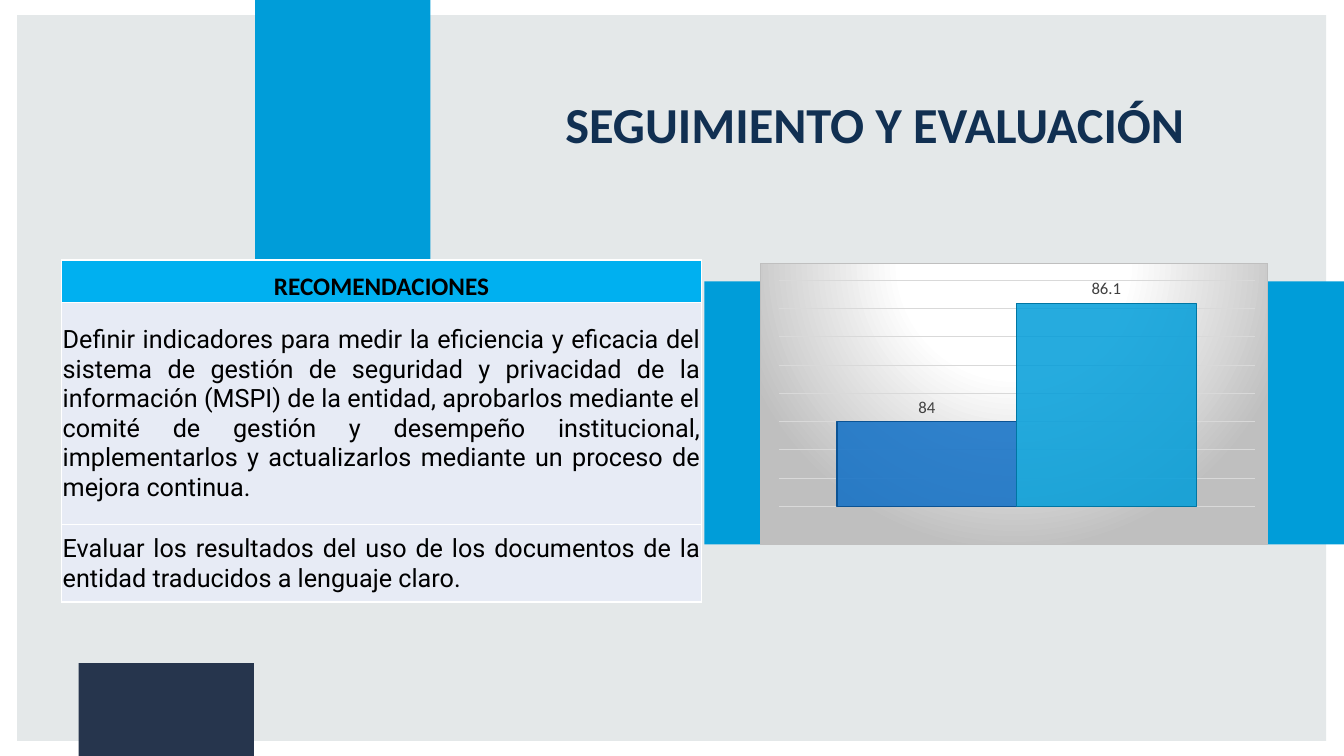
from dataclasses import dataclass

from lxml import etree
from pptx import Presentation
from pptx.chart.data import CategoryChartData
from pptx.dml.color import RGBColor
from pptx.enum.chart import XL_CHART_TYPE, XL_LABEL_POSITION
from pptx.enum.shapes import MSO_SHAPE
from pptx.enum.text import MSO_ANCHOR, PP_ALIGN
from pptx.oxml import parse_xml
from pptx.oxml.ns import nsdecls, qn
from pptx.util import Cm, Pt

CENTER, JUSTIFY = PP_ALIGN.CENTER, PP_ALIGN.JUSTIFY
BOTTOM, MIDDLE = MSO_ANCHOR.BOTTOM, MSO_ANCHOR.MIDDLE
RECTANGLE = MSO_SHAPE.RECTANGLE
CLUSTERED = XL_CHART_TYPE.COLUMN_CLUSTERED
OUTSIDE_END = XL_LABEL_POSITION.OUTSIDE_END


@dataclass(frozen=True)
class Theme:
    panel: str = "E4E8E9"
    band: str = "009DD9"
    foot: str = "26354D"
    title: str = "113052"
    text: str = "000000"
    header: str = "00B0F0"
    row: str = "E7EBF5"
    border: str = "FFFFFF"
    grid: str = "D9D9D9"
    frame: str = "BFBFBF"
    label: str = "404040"
    heading_font: str = "Calibri"
    body_font: str = "Roboto"
    title_size: int = 36
    body_size: int = 18
    label_size: int = 12
    axis_size: int = 10


THEME = Theme()

RECOMMENDATIONS = (
    "Definir indicadores para medir la eficiencia y eficacia del sistema de gestión "
    "de seguridad y privacidad de la información (MSPI) de la entidad, aprobarlos "
    "mediante el comité de gestión y desempeño institucional, implementarlos y "
    "actualizarlos mediante un proceso de mejora continua.",
    "Evaluar los resultados del uso de los documentos de la entidad traducidos a "
    "lenguaje claro.",
)

# name, value, fill, outline, number format
SCORES = (
    ("Series 1", 84, "0F6FC6", "0B5394", "General"),
    ("Series 2", 86.1, "009DD9", "0076A3", "0.0"),
)


def rgb(code):
    return RGBColor.from_string(code)


def style_font(font, size, color, name=THEME.heading_font, bold=False):
    font.size, font.name, font.bold = Pt(size), name, bold
    font.color.rgb = rgb(color)


def write(frame, text, align, anchor, spacing=None, **font_format):
    frame.word_wrap = True
    frame.vertical_anchor = anchor
    paragraph = frame.paragraphs[0]
    paragraph.alignment = align
    paragraph.line_spacing = spacing
    run = paragraph.add_run()
    run.text = text
    style_font(run.font, **font_format)


def add_block(slide, left, top, width, height, color):
    block = slide.shapes.add_shape(RECTANGLE, Cm(left), Cm(top), Cm(width), Cm(height))
    block.shadow.inherit = False
    block.fill.solid()
    block.fill.fore_color.rgb = rgb(color)
    block.line.fill.background()


def add_title(slide, text):
    title = slide.shapes.title
    title.left, title.top, title.width, title.height = Cm(10.9), Cm(0.53), Cm(22.3), Cm(3.48)
    write(title.text_frame, text, CENTER, BOTTOM, spacing=0.9,
          size=THEME.title_size, color=THEME.title, bold=True)
    # Bring the title in front of the background blocks
    slide.shapes.element.append(title.element)


def set_borders(cell):
    properties = cell._tc.get_or_add_tcPr()
    for position, side in enumerate(("lnL", "lnR", "lnT", "lnB")):
        properties.insert(position, parse_xml(
            f'<a:{side} {nsdecls("a")} w="12700"><a:solidFill>'
            f'<a:srgbClr val="{THEME.border}"/></a:solidFill></a:{side}>'))


def fill_cell(cell, text, color, align, anchor, **font_format):
    cell.margin_left = cell.margin_right = cell.margin_top = Cm(0.03)
    cell.margin_bottom = 0
    cell.fill.solid()
    cell.fill.fore_color.rgb = rgb(color)
    set_borders(cell)
    write(cell.text_frame, text, align, anchor,
          size=THEME.body_size, color=THEME.text, **font_format)
    cell.vertical_anchor = anchor


def add_recommendations(slide):
    heights = (1.07, 5.59, 1.96)
    table = slide.shapes.add_table(len(heights), 1, Cm(1.55), Cm(6.55),
                                   Cm(16.13), Cm(sum(heights))).table
    for row, height in zip(table.rows, heights):
        row.height = Cm(height)
    fill_cell(table.cell(0, 0), "RECOMENDACIONES", THEME.header, CENTER, BOTTOM, bold=True)
    for index, text in enumerate(RECOMMENDATIONS, 1):
        fill_cell(table.cell(index, 0), text, THEME.row, JUSTIFY, MIDDLE,
                  name=THEME.body_font)


def set_plot_layout(chart, x, y, width, height):
    plot_area = chart.element.find(f".//{qn('c:plotArea')}")
    for layout in plot_area.findall(qn("c:layout")):
        plot_area.remove(layout)
    sizes = "".join(f'<c:{key} val="{value}"/>'
                    for key, value in zip("xywh", (x, y, width, height)))
    plot_area.insert(0, parse_xml(
        f'<c:layout {nsdecls("c")}><c:manualLayout><c:layoutTarget val="inner"/>'
        f'<c:xMode val="edge"/><c:yMode val="edge"/>{sizes}</c:manualLayout></c:layout>'))


def set_chart_background(chart):
    stops = "".join(f'<a:gs pos="{position * 1000}"><a:srgbClr val="{color}"/></a:gs>'
                    for position, color in ((0, "FFFFFF"), (39, "FFFFFF"), (100, THEME.frame)))
    chart.element.find(qn("c:chart")).addnext(parse_xml(
        f'<c:spPr {nsdecls("c", "a")}><a:gradFill><a:gsLst>{stops}</a:gsLst>'
        '<a:path path="circle"><a:fillToRect l="50000" t="-80000" r="50000" b="180000"/>'
        '</a:path></a:gradFill><a:ln w="9525"><a:solidFill>'
        f'<a:srgbClr val="{THEME.frame}"/></a:solidFill></a:ln></c:spPr>'))


def style_series(series, fill, outline, number_format):
    series.format.fill.solid()
    series.format.fill.fore_color.rgb = rgb(fill)
    series.format.line.color.rgb = rgb(outline)
    series.format.line.width = Pt(0.75)
    labels = series.data_labels
    labels.show_value = True
    labels.position = OUTSIDE_END
    labels.number_format = number_format
    labels.number_format_is_linked = False
    style_font(labels.font, THEME.label_size, THEME.label)


def add_score_chart(slide):
    scores = CategoryChartData()
    scores.categories = ["1"]
    for name, value, *_ in SCORES:
        scores.add_series(name, [value])
    chart = slide.shapes.add_chart(CLUSTERED, Cm(19.15), Cm(6.63), Cm(12.8), Cm(7.11),
                                   scores).chart
    style_font(chart.font, THEME.axis_size, THEME.text)
    chart.has_legend = chart.has_title = False
    chart.category_axis.visible = False
    scale = chart.value_axis
    scale.visible = False
    scale.minimum_scale, scale.maximum_scale, scale.major_unit = 82.5, 86.5, 0.5
    gridline = scale.major_gridlines.format.line
    gridline.color.rgb = rgb(THEME.grid)
    gridline.width = Pt(0.75)
    plot = chart.plots[0]
    plot.vary_by_categories = False
    plot.gap_width, plot.overlap = 65, 0
    for series, (_, _, *style) in zip(plot.series, SCORES):
        style_series(series, *style)
    for color in chart.element.xpath(".//c:ser/c:spPr/a:solidFill/a:srgbClr"):
        etree.SubElement(color, qn("a:alpha"), val="85000")
    set_plot_layout(chart, 0.036, 0.06, 0.939, 0.804)
    set_chart_background(chart)


def main():
    deck = Presentation()
    deck.slide_width, deck.slide_height = Cm(33.87), Cm(19.05)
    slide = deck.slides.add_slide(deck.slide_layouts[0])
    subtitle = slide.placeholders[1].element
    subtitle.getparent().remove(subtitle)

    add_block(slide, 0.43, 0.38, 32.99, 18.29, THEME.panel)
    add_block(slide, 6.43, 0, 4.42, 6.63, THEME.band)
    add_block(slide, 17.75, 7.09, 16.12, 6.63, THEME.band)
    add_block(slide, 1.98, 16.71, 4.42, 2.34, THEME.foot)
    add_title(slide, "SEGUIMIENTO Y EVALUACIÓN")
    add_recommendations(slide)
    add_score_chart(slide)
    deck.save("out.pptx")


if __name__ == "__main__":
    main()
